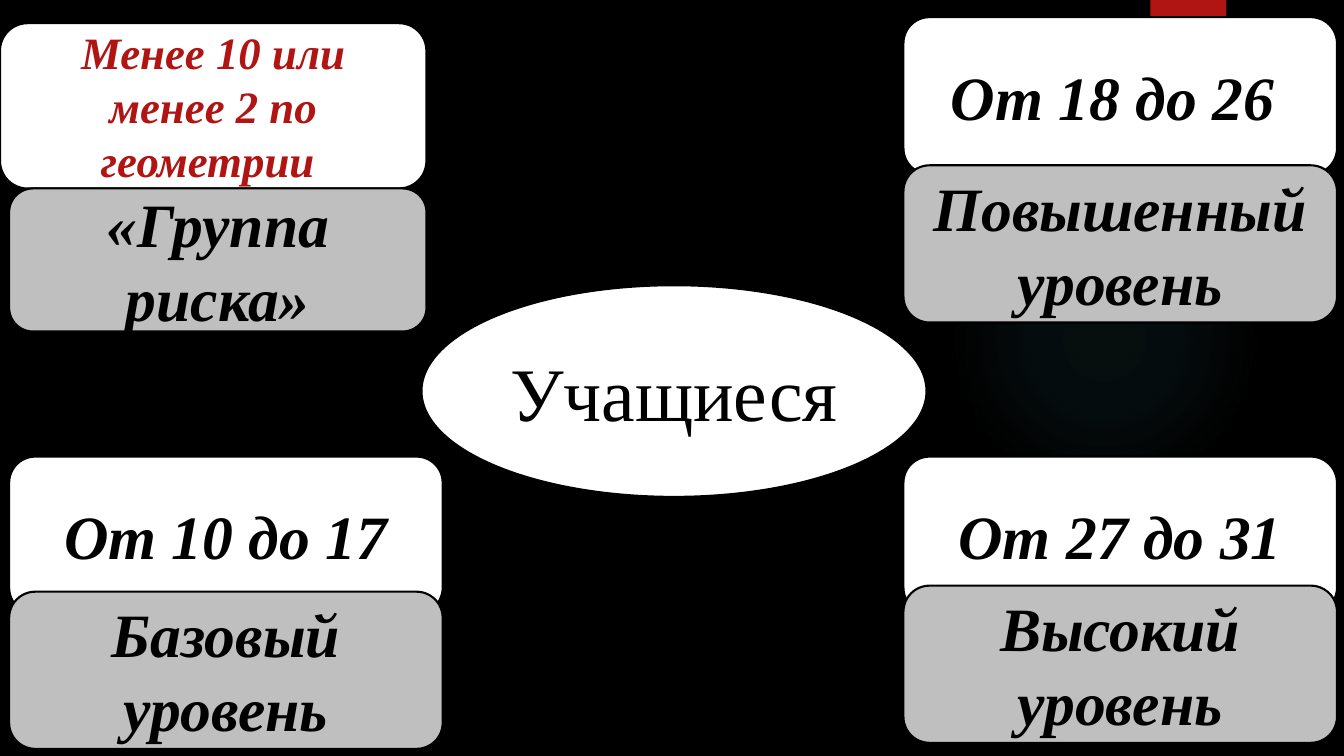
import dataclasses

import lxml.etree
import pptx
import pptx.dml.color
import pptx.enum.shapes
import pptx.enum.text
import pptx.oxml.ns
import pptx.util

SHAPE = pptx.enum.shapes.MSO_SHAPE


@dataclasses.dataclass(frozen=True)
class Theme:
    """Colours, type sizes and shared measures of the slide."""
    black: str = "000000"
    white: str = "FFFFFF"
    grey: str = "BFBFBF"
    red: str = "B01513"
    teal: str = "50B9C1"
    typeface: str = "Times New Roman"
    centre_size: int = 54
    level_size: int = 44
    risk_size: int = 32
    outline: float = 1.5
    width: float = 13.33
    height: float = 7.5


THEME = Theme()
LEFT, RIGHT = 0.68, 67.22
CARD_SIZE = (32.26, 20.8)
GLOW_STOPS = ((0, 7), (36, 6), (69, 0))


def rgb(colour):
    """Turn a hex string into a colour."""
    return pptx.dml.color.RGBColor.from_string(colour)


def add_block(slide, preset, box, colour=None, outline=None):
    """Add a preset shape whose box is given in percent of the slide."""
    sides = (THEME.width, THEME.height) * 2
    lengths = [pptx.util.Inches(share * side / 100) for share, side in zip(box, sides)]
    block = slide.shapes.add_shape(preset, *lengths)
    block.shadow.inherit = False
    if colour:
        block.fill.solid()
        block.fill.fore_color.rgb = rgb(colour)
    if outline:
        block.line.color.rgb = rgb(outline)
        block.line.width = pptx.util.Pt(THEME.outline)
    else:
        block.line.fill.background()
    return block


def add_label(slide, preset, box, text, colour, size, ink=THEME.black, emphasis=True):
    """Add an outlined shape with centred text."""
    label = add_block(slide, preset, box, colour, THEME.black)
    frame = label.text_frame
    frame.word_wrap = True
    frame.vertical_anchor = pptx.enum.text.MSO_ANCHOR.MIDDLE
    paragraph = frame.paragraphs[0]
    paragraph.alignment = pptx.enum.text.PP_ALIGN.CENTER
    run = paragraph.add_run()
    run.text = text
    formats = {
        "name": THEME.typeface,
        "size": pptx.util.Pt(size),
        "bold": emphasis,
        "italic": emphasis,
    }
    for attribute, value in formats.items():
        setattr(run.font, attribute, value)
    run.font.color.rgb = rgb(ink)


def add_glow(slide, box):
    """Add a circle with a faint radial gradient."""
    glow = add_block(slide, SHAPE.OVAL, box)
    stops = "".join(
        f'<a:gs pos="{position * 1000}"><a:srgbClr val="{THEME.teal}">'
        f'<a:alpha val="{opacity * 1000}"/></a:srgbClr></a:gs>'
        for position, opacity in GLOW_STOPS
    )
    gradient = lxml.etree.fromstring(
        f'<a:gradFill {pptx.oxml.ns.nsdecls("a")}><a:gsLst>{stops}</a:gsLst>'
        '<a:path path="circle"><a:fillToRect l="50000" t="50000" r="50000" b="50000"/>'
        "</a:path></a:gradFill>"
    )
    geometry = glow._element.spPr.find(pptx.oxml.ns.qn("a:prstGeom"))
    geometry.addnext(gradient)


def add_level(slide, score_box, score, level_box, level, size=THEME.level_size, ink=THEME.black):
    """Add a score card and the level card beneath it."""
    add_label(slide, SHAPE.ROUNDED_RECTANGLE, score_box, score, THEME.white, size, ink)
    add_label(slide, SHAPE.ROUNDED_RECTANGLE, level_box, level, THEME.grey, THEME.level_size)


def main():
    """Build the slide and save it."""
    deck = pptx.Presentation()
    deck.slide_width = pptx.util.Inches(THEME.width)
    deck.slide_height = pptx.util.Inches(THEME.height)
    slide = deck.slides.add_slide(deck.slide_layouts[6])
    slide.background.fill.solid()
    slide.background.fill.fore_color.rgb = rgb(THEME.black)

    add_glow(slide, (70.59, 24.4, 23.11, 41.07))
    add_block(slide, SHAPE.RECTANGLE, (85.6, 0, 5.63, 16.67), THEME.red)
    add_label(slide, SHAPE.OVAL, (31.36, 37.73, 37.58, 28), "Учащиеся",
              THEME.white, THEME.centre_size, emphasis=False)

    add_level(slide, (0, 3.07, 31.73, 21.87), "Менее 10 или менее 2 по геометрии ",
              (LEFT, 24.93, 31.06, 18.93), "«Группа риска»", THEME.risk_size, THEME.red)
    levels = (
        (LEFT, 60.4, "От 10 до 17", 78.27, "Базовый уровень"),
        (RIGHT, 2.27, "От 18 до 26 ", 21.87, "Повышенный уровень"),
        (RIGHT, 60.4, "От 27 до 31", 77.47, "Высокий уровень"),
    )
    for left, score_top, score, level_top, level in levels:
        add_level(slide, (left, score_top, *CARD_SIZE), score,
                  (left, level_top, *CARD_SIZE), level)
    deck.save("out.pptx")


if __name__ == "__main__":
    main()
